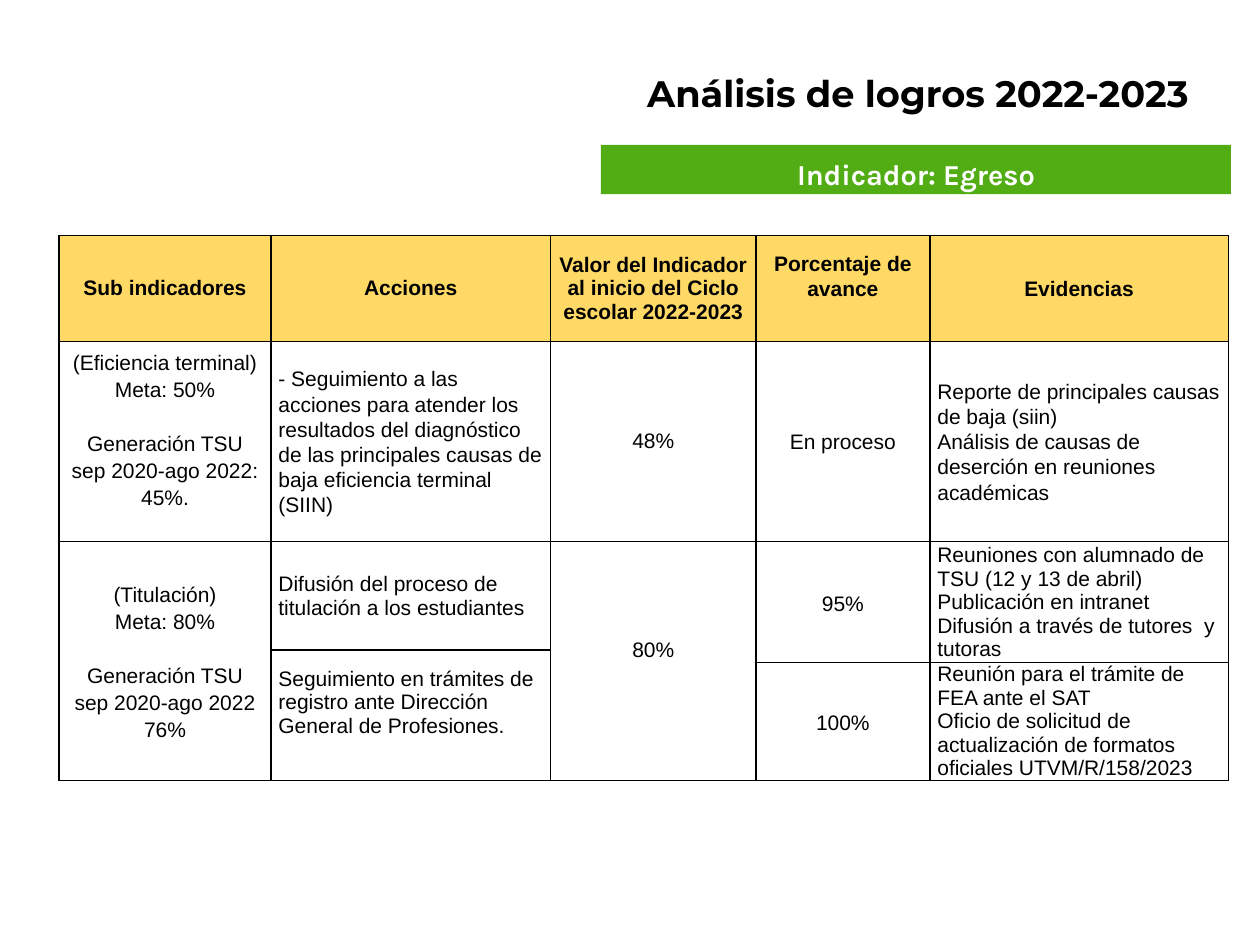
from lxml.etree import SubElement
from pptx import Presentation
from pptx.dml.color import RGBColor
from pptx.enum.shapes import MSO_SHAPE
from pptx.enum.text import MSO_ANCHOR, PP_ALIGN
from pptx.oxml.ns import qn
from pptx.util import Inches, Pt

TITLE = "Análisis de logros 2022-2023"
INDICATOR = "Indicador: Egreso"
COLUMN_WIDTHS = [1.68, 2.22, 1.63, 1.38, 2.37]
ROW_HEIGHTS = [0.84, 1.59, 0.86, 0.1, 0.93]
MERGES = [((2, 0), (4, 0)), ((2, 2), (4, 2)), ((2, 3), (3, 3)),
          ((2, 4), (3, 4)), ((3, 1), (4, 1))]

HEADERS = [
    ("Sub indicadores", 1, 0),
    ("Acciones", 1, 0),
    ("Valor del Indicador al inicio del Ciclo escolar 2022-2023", 1, 0),
    ("Porcentaje de avance", 1.07, 0.2),
    ("Evidencias", 1.07, 0),
]

# row, column, paragraph groups, alignment, line spacing, side margin, bottom margin
CENTER, LEFT = PP_ALIGN.CENTER, PP_ALIGN.LEFT
BODY = [
    (1, 0, [["(Eficiencia terminal)", "Meta: 50%"],
            ["Generación TSU", "sep 2020-ago 2022: 45%."]], CENTER, 1.15, 0.01, 0.2),
    (1, 1, [["- Seguimiento a las acciones para atender los resultados del diagnóstico "
             "de las principales causas de baja eficiencia terminal (SIIN)"]], LEFT, 1.07, 0.06, 0),
    (1, 2, [["48%"]], CENTER, 1, 0.06, 0),
    (1, 3, [["En proceso"]], CENTER, 1.07, 0.06, 0),
    (1, 4, [["Reporte de principales causas de baja (siin)",
             "Análisis de causas de deserción en reuniones académicas"]], LEFT, 1.07, 0.06, 0),
    (2, 0, [["(Titulación)", "Meta: 80%"],
            ["Generación TSU", "sep 2020-ago 2022", "76%"]], CENTER, 1.15, 0.01, 0),
    (2, 1, [["Difusión del proceso de titulación a los estudiantes"]], LEFT, 1, 0.06, 0),
    (2, 2, [["80%"]], CENTER, 1.15, 0.01, 0.2),
    (2, 3, [["95%"]], CENTER, 1.15, 0.01, 0),
    (2, 4, [["Reuniones con alumnado de TSU (12 y 13 de abril)",
             "Publicación en intranet",
             "Difusión a través de tutores  y tutoras"]], LEFT, 1, 0.06, 0),
    (3, 1, [["Seguimiento en trámites de registro ante Dirección General de Profesiones."]],
     LEFT, 1, 0.06, 0.2),
    (4, 3, [["100%"]], CENTER, 1.15, 0.01, 0),
    (4, 4, [["Reunión para el trámite de FEA ante el SAT",
             "Oficio de solicitud de actualización de formatos oficiales UTVM/R/158/2023"]],
     LEFT, 1, 0.06, 0),
]


def color(value):
    return RGBColor.from_string(value)


def format_paragraph(paragraph, alignment, spacing, font_name, size, font_color, bold):
    paragraph.alignment = alignment
    paragraph.line_spacing = spacing
    for run in paragraph.runs:
        run.font.name = font_name
        run.font.size = Pt(size)
        run.font.bold = bold
        run.font.color.rgb = color(font_color)


def add_borders(cell):
    properties = cell._tc.get_or_add_tcPr()
    for side in ("lnL", "lnR", "lnT", "lnB"):
        line = SubElement(properties, qn(f"a:{side}"), w=str(Pt(1)))
        fill = SubElement(line, qn("a:solidFill"))
        SubElement(fill, qn("a:srgbClr"), val="000000")


def fill_cell(cell, groups, alignment, spacing, side, bottom, bold=False):
    cell.vertical_anchor = MSO_ANCHOR.MIDDLE
    cell.margin_left = cell.margin_right = Inches(side)
    cell.margin_bottom = Inches(bottom)
    cell.text_frame.text = "\n".join(line for group in groups for line in group)
    for paragraph in cell.text_frame.paragraphs:
        format_paragraph(paragraph, alignment, spacing, "Arial", 12, "000000", bold)
    if len(groups) > 1:
        cell.text_frame.paragraphs[len(groups[0])].space_before = Pt(15.5)


def add_bar(slide, text, box, fill, anchor, spacing, font_name, size, font_color):
    shape = slide.shapes.add_shape(MSO_SHAPE.RECTANGLE, *map(Inches, box))
    shape.shadow.inherit = False
    shape.fill.solid()
    shape.fill.fore_color.rgb = color(fill)
    shape.line.fill.background()
    shape.text_frame.word_wrap = True
    shape.text_frame.vertical_anchor = anchor
    shape.text_frame.text = text
    format_paragraph(shape.text_frame.paragraphs[0], CENTER, spacing,
                     font_name, size, font_color, True)


def add_indicator_table(slide):
    table = slide.shapes.add_table(
        len(ROW_HEIGHTS), len(COLUMN_WIDTHS), Inches(0.47), Inches(1.87),
        Inches(sum(COLUMN_WIDTHS)), Inches(sum(ROW_HEIGHTS))).table
    table.first_row = table.horz_banding = False
    for column, width in zip(table.columns, COLUMN_WIDTHS):
        column.width = Inches(width)
    for index, height in enumerate(ROW_HEIGHTS):
        table.rows[index].height = Inches(height)
        for cell in table.rows[index].cells:
            cell.margin_top = cell.margin_bottom = 0
            add_borders(cell)
            cell.fill.solid()
            cell.fill.fore_color.rgb = color("FFFFFF" if index else "FFD965")
    for first, last in MERGES:
        table.cell(*first).merge(table.cell(*last))
    for column, (text, spacing, bottom) in enumerate(HEADERS):
        fill_cell(table.cell(0, column), [[text]], CENTER, spacing, 0.06, bottom, True)
    for row, column, *content in BODY:
        fill_cell(table.cell(row, column), *content)


def main():
    presentation = Presentation()
    presentation.slide_width, presentation.slide_height = Inches(10), Inches(7.5)
    slide = presentation.slides.add_slide(presentation.slide_layouts[6])
    add_bar(slide, TITLE, (4.8, 0.59, 4.97, 0.34), "FFFFFF", MSO_ANCHOR.MIDDLE,
            0.9, "Montserrat", 21, "000000")
    add_indicator_table(slide)
    add_bar(slide, INDICATOR, (4.77, 1.15, 5, 0.39), "51AD13", MSO_ANCHOR.TOP,
            1.15, "Karla", 16.5, "FFFFFF")
    presentation.save("out.pptx")


if __name__ == "__main__":
    main()
